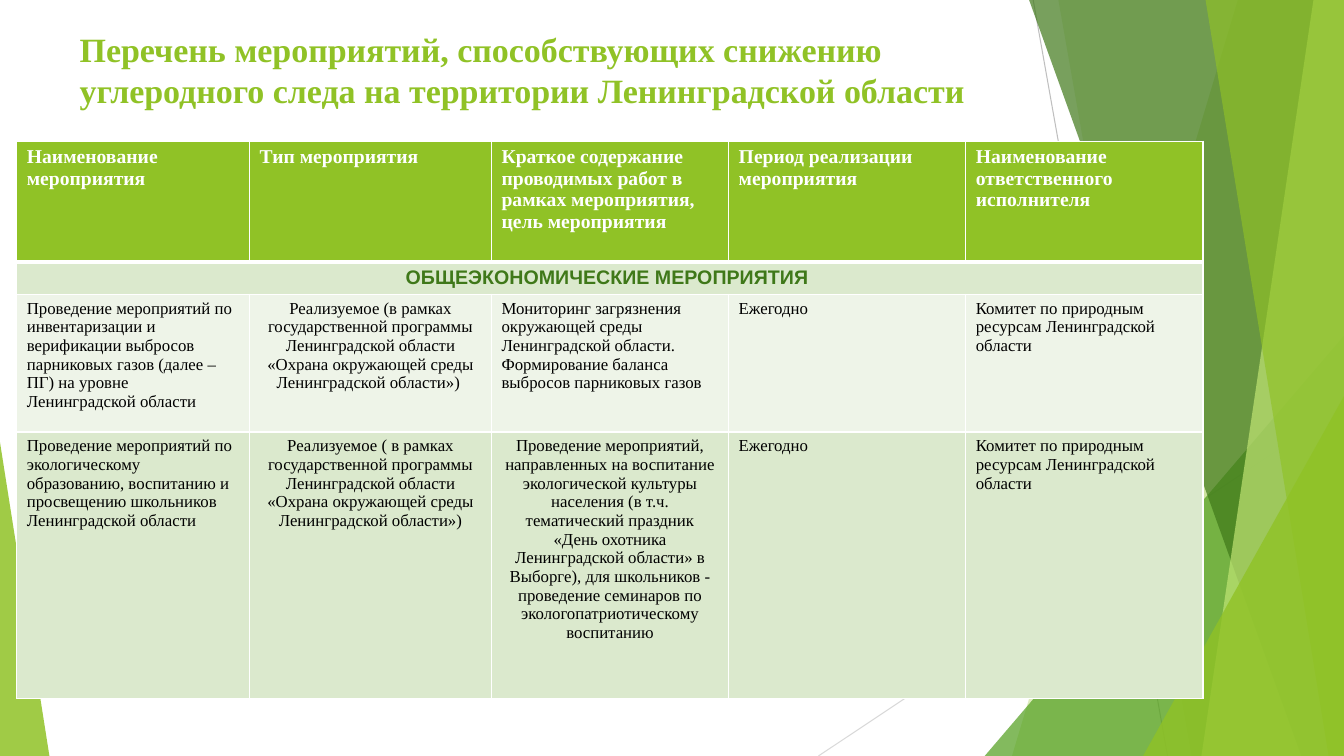
"""Build a slide listing measures that reduce the carbon footprint of a region."""
from lxml.etree import SubElement
from pptx import Presentation
from pptx.dml.color import RGBColor
from pptx.enum.shapes import MSO_CONNECTOR, MSO_SHAPE
from pptx.enum.text import MSO_ANCHOR, MSO_AUTO_SIZE, PP_ALIGN
from pptx.oxml.ns import qn
from pptx.util import Pt

WIDTH, HEIGHT = 960, 540
GREEN, DARK_GREEN, WHITE, BLACK = "90C226", "3F7819", "FFFFFF", "000000"
PALE, PALER = "EEF4E8", "DBE9CD"
LEFT, CENTER = PP_ALIGN.LEFT, PP_ALIGN.CENTER

TITLE = ("Перечень мероприятий, способствующих снижению "
         "углеродного следа на территории Ленинградской области")
PROGRAM = ("в рамках государственной программы Ленинградской области "
           "«Охрана окружающей среды Ленинградской области»)")
COMMITTEE = "Комитет по природным ресурсам Ленинградской области"
ROWS = [
    ["Наименование мероприятия", "Тип мероприятия",
     "Краткое содержание проводимых работ в рамках мероприятия, цель мероприятия",
     "Период реализации мероприятия", "Наименование ответственного исполнителя"],
    ["ОБЩЕЭКОНОМИЧЕСКИЕ МЕРОПРИЯТИЯ "],
    ["Проведение мероприятий по инвентаризации и верификации выбросов парниковых газов "
     "(далее – ПГ) на уровне Ленинградской области",
     f"Реализуемое ({PROGRAM} ",
     "Мониторинг загрязнения окружающей среды Ленинградской области. "
     "Формирование баланса выбросов парниковых газов",
     "Ежегодно", COMMITTEE],
    ["Проведение мероприятий по экологическому образованию, воспитанию и просвещению "
     "школьников Ленинградской области",
     f"Реализуемое ( {PROGRAM}",
     "Проведение мероприятий, направленных на воспитание экологической культуры населения "
     "(в т.ч. тематический праздник «День охотника Ленинградской области» в Выборге), "
     "для школьников - проведение семинаров по экологопатриотическому воспитанию",
     "Ежегодно", COMMITTEE],
]
TITLE_FONT = {"name": "Times New Roman", "size": Pt(24.3), "bold": True, "color": GREEN}
HEADER_FONT = {"name": "Times New Roman", "size": Pt(14), "bold": True, "color": WHITE}
SECTION_FONT = {"name": "Arial", "size": Pt(14), "bold": True, "color": DARK_GREEN}
BODY_FONT = {"name": "Times New Roman", "size": Pt(12), "bold": False, "color": BLACK}
ROW_STYLES = [
    (86.4, GREEN, HEADER_FONT, [LEFT] * 5),
    (22.7, PALER, SECTION_FONT, [CENTER]),
    (98.4, PALE, BODY_FONT, [LEFT, CENTER, LEFT, LEFT, LEFT]),
    (190.4, PALER, BODY_FONT, [LEFT, CENTER, CENTER, LEFT, LEFT]),
]
COLUMN_WIDTHS = [166.3, 172.8, 169.4, 169.4, 169.4]
TABLE_LEFT, TABLE_TOP = 12, 100.8

LINES = [((738, 0), (834, HEIGHT), "BFBFBF"), ((WIDTH, 290), (584.6, HEIGHT), "D9D9D9")]
BACK_BANDS = [(884.2, 722.9, GREEN, 30), (756, 851, GREEN, 20)]
FRONT_BANDS = [(735.1, 929.5, DARK_GREEN, 70), (938.2, 858.2, "C0E474", 70),
               (861.1, 949, GREEN, 65)]
BACK_TRIANGLES = [(703.4, 239.8, 256.6, 1, "54A021", 72)]
FRONT_TRIANGLES = [(816.5, 283, 143.5, 1, GREEN, 80), (0, 316, 35.3, 0, GREEN, 85)]


def rgb(value):
    return RGBColor.from_string(value)


def format_font(font, values):
    for name, value in values.items():
        if name == "color":
            font.color.rgb = rgb(value)
        else:
            setattr(font, name, value)


def paint(shape, color, opacity):
    shape.shadow.inherit = False
    shape.line.fill.background()
    shape.fill.solid()
    shape.fill.fore_color.rgb = rgb(color)
    color_element = shape.fill._xPr.find(".//" + qn("a:srgbClr"))
    SubElement(color_element, qn("a:alpha")).set("val", str(opacity * 1000))


def add_line(slide, start, end, color):
    points = [Pt(value) for value in start + end]
    line = slide.shapes.add_connector(MSO_CONNECTOR.STRAIGHT, *points)
    line.line.color.rgb = rgb(color)
    line.line.width = Pt(0.75)
    SubElement(line._element.spPr, qn("a:effectLst"))


def add_band(slide, top_x, bottom_x, color, opacity):
    builder = slide.shapes.build_freeform(Pt(top_x), 0)
    corners = [(WIDTH, 0), (WIDTH, HEIGHT), (bottom_x, HEIGHT)]
    builder.add_line_segments([(Pt(x), Pt(y)) for x, y in corners], close=True)
    paint(builder.convert_to_shape(), color, opacity)


def add_triangle(slide, left, top, width, apex, color, opacity):
    box = [Pt(value) for value in (left, top, width, HEIGHT - top)]
    shape = slide.shapes.add_shape(MSO_SHAPE.ISOSCELES_TRIANGLE, *box)
    shape.adjustments[0] = apex
    paint(shape, color, opacity)


def add_title(slide):
    title = slide.shapes.title
    box = {"left": 49.7, "top": 16.6, "width": 676.8, "height": 84.2}
    for name, value in box.items():
        setattr(title, name, Pt(value))
    frame = title.text_frame
    frame.text = TITLE
    frame.word_wrap = True
    frame.auto_size = MSO_AUTO_SIZE.NONE
    frame.vertical_anchor = MSO_ANCHOR.TOP
    paragraph = frame.paragraphs[0]
    paragraph.alignment = LEFT
    paragraph.line_spacing = Pt(29.3)
    format_font(paragraph.runs[0].font, TITLE_FONT)
    slide.shapes._spTree.append(title._element)


def set_borders(cell, widths):
    properties = cell._tc.get_or_add_tcPr()
    for position, (side, width) in enumerate(widths.items()):
        border = properties.makeelement(qn("a:" + side), {"w": str(Pt(width))})
        fill = SubElement(border, qn("a:solidFill"))
        SubElement(fill, qn("a:srgbClr")).set("val", WHITE)
        properties.insert(position, border)


def add_measures_table(slide):
    box = (TABLE_LEFT, TABLE_TOP, sum(COLUMN_WIDTHS), sum(style[0] for style in ROW_STYLES))
    table = slide.shapes.add_table(
        len(ROWS), len(COLUMN_WIDTHS), *[Pt(value) for value in box]).table
    for column, width in zip(table.columns, COLUMN_WIDTHS):
        column.width = Pt(width)
    for index, (texts, style) in enumerate(zip(ROWS, ROW_STYLES)):
        height, fill, font, alignments = style
        table.rows[index].height = Pt(height)
        borders = {"lnL": 1, "lnR": 1, "lnT": 3 if index == 1 else 1,
                   "lnB": 3 if index == 0 else 1}
        for cell in table.rows[index].cells:
            cell.fill.solid()
            cell.fill.fore_color.rgb = rgb(fill)
            set_borders(cell, borders)
        if len(texts) == 1:
            table.cell(index, 0).merge(table.cell(index, len(COLUMN_WIDTHS) - 1))
        for column, (text, alignment) in enumerate(zip(texts, alignments)):
            cell = table.cell(index, column)
            cell.text = text
            paragraph = cell.text_frame.paragraphs[0]
            paragraph.alignment = alignment
            format_font(paragraph.runs[0].font, font)


def main():
    presentation = Presentation()
    presentation.slide_width, presentation.slide_height = Pt(WIDTH), Pt(HEIGHT)
    slide = presentation.slides.add_slide(presentation.slide_layouts[5])
    decorations = [(add_line, LINES), (add_band, BACK_BANDS), (add_triangle, BACK_TRIANGLES),
                   (add_band, FRONT_BANDS), (add_triangle, FRONT_TRIANGLES)]
    for add, items in decorations:
        for item in items:
            add(slide, *item)
    add_title(slide)
    add_measures_table(slide)
    presentation.save("out.pptx")


if __name__ == "__main__":
    main()
